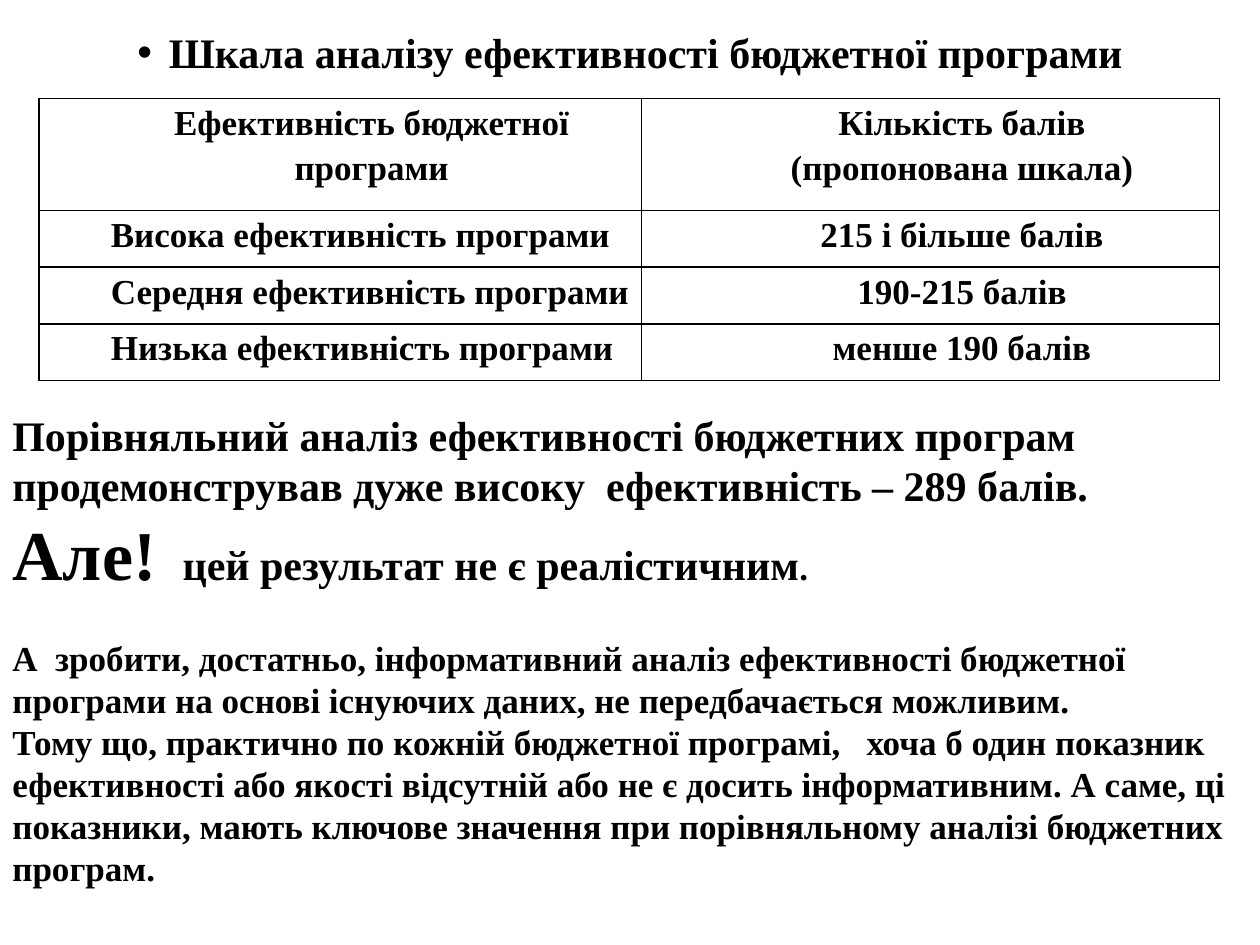
from pptx import Presentation
from pptx.dml.color import RGBColor
from pptx.enum.text import MSO_ANCHOR, MSO_AUTO_SIZE, PP_ALIGN
from pptx.oxml import parse_xml
from pptx.oxml.ns import nsdecls
from pptx.util import Inches, Pt

CENTER, LEFT = PP_ALIGN.CENTER, PP_ALIGN.LEFT
TOP = MSO_ANCHOR.TOP
NO_AUTOFIT = MSO_AUTO_SIZE.NONE

THEME = {
    "font": "Times New Roman",
    "ink": RGBColor(0, 0, 0),
    "accent": 40,
    "large": 24,
    "normal": 20,
    "border": 1,
}

TITLE = "Шкала аналізу ефективності бюджетної програми"
SCALE = [
    ("Ефективність бюджетної програми", "Кількість балів\n(пропонована шкала)"),
    ("Висока ефективність програми", "215 і більше балів"),
    ("Середня ефективність програми", "190-215 балів"),
    ("Низька ефективність програми", "менше 190 балів"),
]
COLUMN_WIDTHS = [4.78, 4.59]
ROW_HEIGHTS = [0.89, 0.45, 0.45, 0.45]

# Each paragraph: space before in points, then (text, size name) runs
CONCLUSIONS = [
    (0, [("Порівняльний аналіз ефективності бюджетних програм продемонстрував "
          "дуже високу  ефективність – 289 балів.", "large")]),
    (0, [("Але! ", "accent"), (" ", "normal"),
         ("цей результат не є реалістичним", "large"), (".", "normal")]),
    (24, [("А  зробити, достатньо, інформативний аналіз ефективності бюджетної "
           "програми на основі існуючих даних, не передбачається можливим.", "normal")]),
    (0, [("Тому що, практично по кожній бюджетної програмі,   хоча б один показник "
          "ефективності або якості відсутній або не є досить інформативним. "
          "А саме, ці показники, мають ключове значення при порівняльному аналізі "
          "бюджетних програм.", "normal")]),
]


def style_run(r, size):
    r.font.name = THEME["font"]
    r.font.size = Pt(THEME[size])
    r.font.bold = True
    r.font.color.rgb = THEME["ink"]


def set_indent(p, left, first=0):
    pPr = p._p.get_or_add_pPr()
    pPr.set("marL", str(Inches(left)))
    pPr.set("indent", str(Inches(first)))
    return pPr


def add_borders(cell):
    tcPr = cell._tc.get_or_add_tcPr()
    for i, side in enumerate(("lnL", "lnR", "lnT", "lnB")):
        tcPr.insert(i, parse_xml(
            f'<a:{side} {nsdecls("a")} w="{Pt(THEME["border"])}"><a:solidFill>'
            f'<a:srgbClr val="{THEME["ink"]}"/></a:solidFill></a:{side}>'))


def add_title(s):
    sp = s.shapes.title
    sp.left, sp.top, sp.width, sp.height = map(Inches, (0, 0.16, 10, 0.5))
    tf = sp.text_frame
    tf.text = TITLE
    tf.auto_size = NO_AUTOFIT
    tf.vertical_anchor = TOP
    p = tf.paragraphs[0]
    pPr = set_indent(p, 0.25, -0.25)
    pPr.append(parse_xml(f'<a:buFont {nsdecls("a")} typeface="Arial"/>'))
    pPr.append(parse_xml(f'<a:buChar {nsdecls("a")} char="•"/>'))
    p.alignment = CENTER
    style_run(p.runs[0], "large")


def fill_cell(cell, text, alignment):
    cell.text = text
    cell.fill.background()
    cell.margin_left = cell.margin_right = Inches(0.07)
    cell.margin_top = cell.margin_bottom = 0
    for p in cell.text_frame.paragraphs:
        set_indent(p, 0.5)
        p.alignment = alignment
        p.line_spacing = 1.15
        style_run(p.runs[0], "normal")
    add_borders(cell)


def add_scale(s):
    table = s.shapes.add_table(
        len(SCALE), len(COLUMN_WIDTHS), Inches(0.31), Inches(0.78),
        Inches(sum(COLUMN_WIDTHS)), Inches(sum(ROW_HEIGHTS))).table
    table.first_row = table.horz_banding = False
    for column, width in zip(table.columns, COLUMN_WIDTHS):
        column.width = Inches(width)
    for i, (row, height) in enumerate(zip(SCALE, ROW_HEIGHTS)):
        table.rows[i].height = Inches(height)
        for j, text in enumerate(row):
            is_level = i > 0 and j == 0
            fill_cell(table.cell(i, j), text, LEFT if is_level else CENTER)


def add_conclusions(s):
    sp = s.shapes.add_textbox(*map(Inches, (0, 3.2, 10, 4.54)))
    tf = sp.text_frame
    tf.word_wrap = True
    tf.vertical_anchor = TOP
    for i, (space_before, runs) in enumerate(CONCLUSIONS):
        p = tf.add_paragraph() if i else tf.paragraphs[0]
        p.space_before = Pt(space_before)
        for text, size in runs:
            r = p.add_run()
            r.text = text
            style_run(r, size)


def main():
    prs = Presentation()
    prs.slide_width, prs.slide_height = Inches(10), Inches(7.5)
    s = prs.slides.add_slide(prs.slide_layouts[5])
    add_conclusions(s)
    add_scale(s)
    add_title(s)
    prs.save("out.pptx")


if __name__ == "__main__":
    main()
